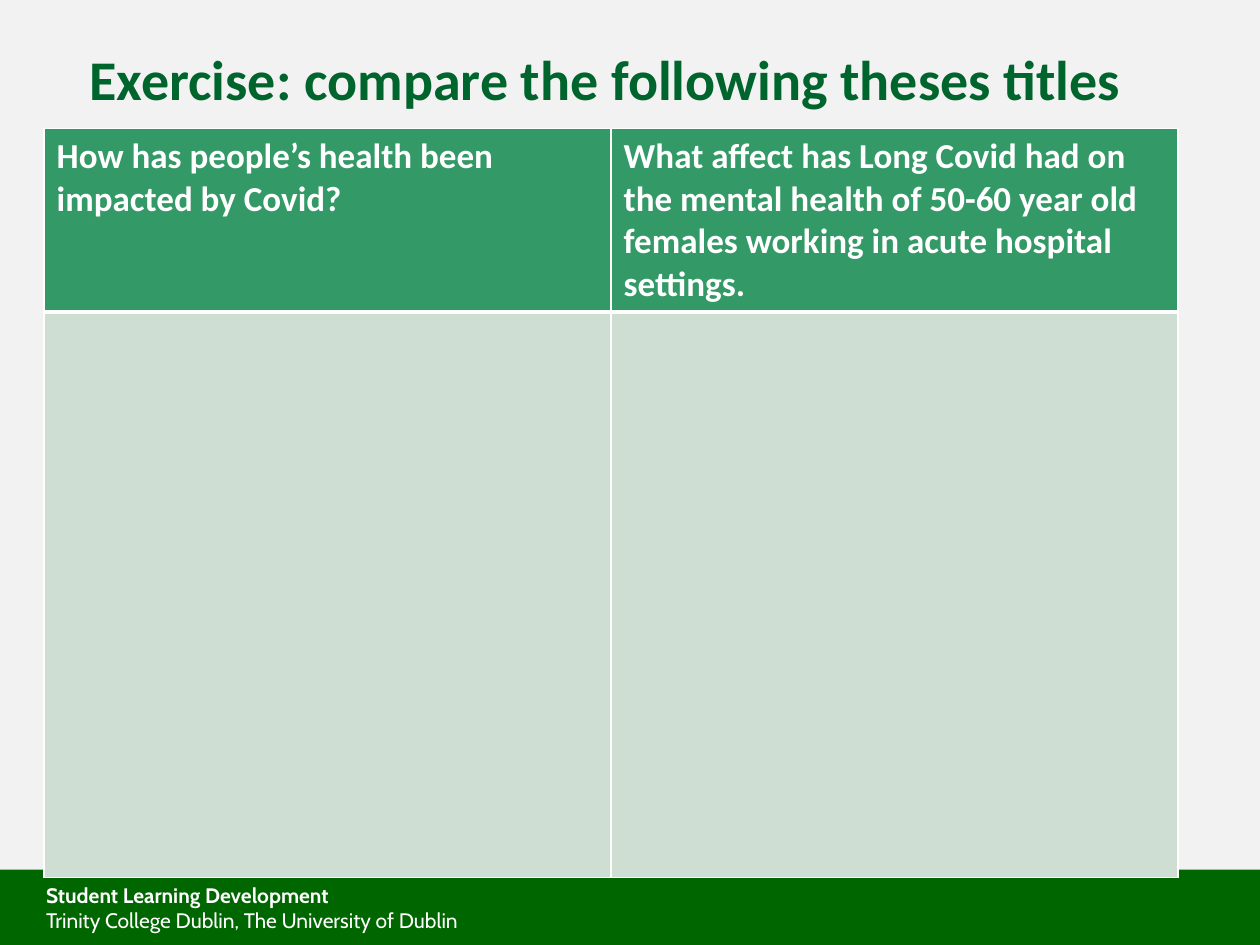
from lxml.etree import SubElement
from pptx import Presentation
from pptx.dml.color import RGBColor
from pptx.enum.shapes import MSO_SHAPE as Shape
from pptx.enum.text import MSO_ANCHOR as Anchor, MSO_AUTO_SIZE as AutoSize, PP_ALIGN as Align
from pptx.oxml.ns import qn
from pptx.util import Cm, Pt

COLORS = {
    "background": "F2F2F2",
    "footer": "006600",
    "title": "00642D",
    "header": "339966",
    "body": "CEDED3",
    "white": "FFFFFF",
}
THESES = [
    "How has people’s health been impacted by Covid?",
    "What affect has Long Covid had on the mental health of 50-60 year old "
    "females working in acute hospital settings.",
]


def paint(fill, color):
    fill.solid()
    fill.fore_color.rgb = RGBColor.from_string(COLORS[color])


def style(paragraph, font_name, size, color, bold=True):
    for run in paragraph.runs:
        run.font.name = font_name
        run.font.size = Pt(size)
        run.font.bold = bold
        run.font.color.rgb = RGBColor.from_string(COLORS[color])


def add_borders(cell, bottom_width):
    """Draw white cell borders, 1 pt except at the bottom."""
    properties = cell._tc.get_or_add_tcPr()
    for position, (side, width) in enumerate(
        [("lnL", 1), ("lnR", 1), ("lnT", 1), ("lnB", bottom_width)]
    ):
        line = properties.makeelement(qn(f"a:{side}"), {"w": str(Pt(width))})
        properties.insert(position, line)
        color = SubElement(SubElement(line, qn("a:solidFill")), qn("a:srgbClr"))
        color.set("val", COLORS["white"])


def add_footer(slide, left, top, width, height):
    band = slide.shapes.add_shape(Shape.RECTANGLE, left, top, width, height)
    band.shadow.inherit = False
    paint(band.fill, "footer")
    band.line.fill.background()

    affiliation = slide.shapes.add_textbox(left + Cm(0.71), top + Cm(0.13), Cm(9.22), Cm(1.3))
    frame = affiliation.text_frame
    frame.word_wrap = False
    frame.auto_size = AutoSize.SHAPE_TO_FIT_TEXT
    frame.text = "Student Learning Development\nTrinity College Dublin, The University of Dublin"
    department, university = frame.paragraphs
    style(department, "Cabin", 12, "white")
    style(university, "Cabin", 12, "white", bold=False)


def place_title(slide, left, top, width, height):
    title = slide.shapes.title
    title.left, title.top, title.width, title.height = left, top, width, height
    frame = title.text_frame
    frame.text = "Exercise: compare the following theses titles"
    frame.vertical_anchor = Anchor.MIDDLE
    heading = frame.paragraphs[0]
    heading.alignment = Align.LEFT
    style(heading, "Calibri", 32, "title")


def add_comparison(slide, left, top, width, height):
    comparison = slide.shapes.add_table(2, len(THESES), left, top, width, height).table
    header_height = Cm(3.7)
    comparison.rows[0].height = header_height
    comparison.rows[1].height = height - header_height
    for column, thesis in enumerate(THESES):
        header, answer = comparison.cell(0, column), comparison.cell(1, column)
        header.text = thesis
        style(header.text_frame.paragraphs[0], "Calibri", 20, "white")
        paint(header.fill, "header")
        paint(answer.fill, "body")
        add_borders(header, bottom_width=3)
        add_borders(answer, bottom_width=1)
        # The shared edge carries the same weight from both sides.
        answer._tc.tcPr.find(qn("a:lnT")).set("w", str(Pt(3)))


def main():
    deck = Presentation()
    deck.slide_width, deck.slide_height = Cm(25.4), Cm(19.05)
    slide = deck.slides.add_slide(deck.slide_layouts[5])
    paint(slide.background.fill, "background")
    add_footer(slide, Cm(-0.03), Cm(17.53), Cm(25.53), Cm(1.6))
    place_title(slide, Cm(1.55), Cm(0.36), Cm(23.34), Cm(2.41))
    add_comparison(slide, Cm(0.89), Cm(2.59), Cm(22.86), Cm(15.1))
    deck.save("out.pptx")


if __name__ == "__main__":
    main()
